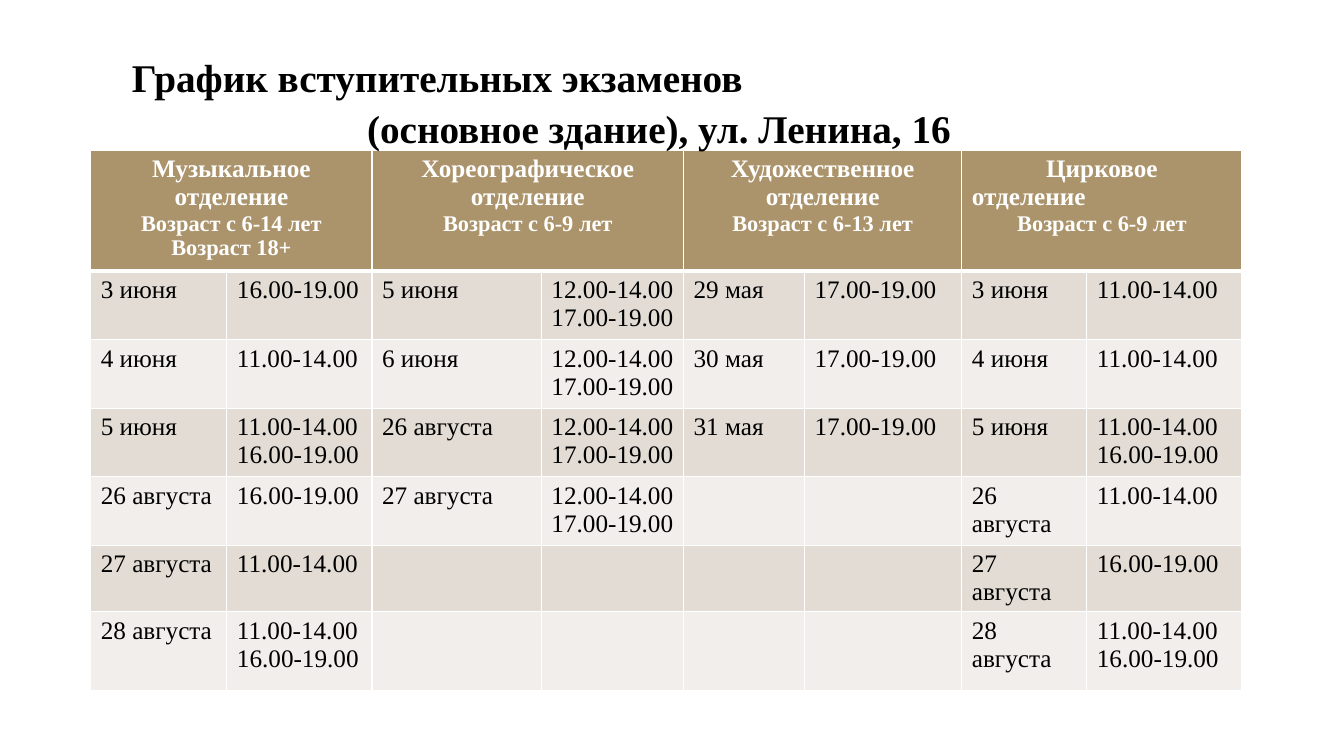
from lxml.etree import SubElement
from pptx import Presentation
from pptx.dml.color import RGBColor
from pptx.enum.text import MSO_ANCHOR, PP_ALIGN
from pptx.oxml.ns import qn
from pptx.util import Inches, Pt

FONT = "Times New Roman"
WHITE, BLACK, HEAD = "FFFFFF", "000000", "AB946B"
BANDS = ["E2DCD4", "F1EEEB"]
LEFT, CENTER = PP_ALIGN.LEFT, PP_ALIGN.CENTER

TITLE = [("График вступительных экзаменов", LEFT),
         ("(основное здание), ул. Ленина, 16", CENTER)]
MORNING, EVENING = "11.00-14.00", "16.00-19.00"
NOON, LATE = "12.00-14.00", "17.00-19.00"
DEPARTMENTS = [
    ([("Музыкальное отделение", 18, CENTER), ("Возраст с 6-14 лет", 16, CENTER),
      ("Возраст 18+", 16, CENTER)],
     [("3 июня", [EVENING]), ("4 июня", [MORNING]), ("5 июня", [MORNING, EVENING]),
      ("26 августа", [EVENING]), ("27 августа", [MORNING]),
      ("28 августа", [MORNING, EVENING])]),
    ([("Хореографическое отделение", 18, CENTER), ("Возраст с 6-9 лет", 16, CENTER)],
     [(day, [NOON, LATE]) for day in ("5 июня", "6 июня", "26 августа", "27 августа")]),
    ([("Художественное отделение", 18, CENTER), ("Возраст с 6-13 лет", 16, CENTER)],
     [(day, [LATE]) for day in ("29 мая", "30 мая", "31 мая")]),
    ([("Цирковое", 18, CENTER), ("отделение", 18, LEFT), ("Возраст с 6-9 лет", 16, CENTER)],
     [("3 июня", [MORNING]), ("4 июня", [MORNING]), ("5 июня", [MORNING, EVENING]),
      ("26 августа", [MORNING]), ("27 августа", [EVENING]),
      ("28 августа", [MORNING, EVENING])]),
]
COLS = [1.35, 1.44, 1.68, 1.41, 1.2, 1.56, 1.24, 1.54]
ROWS = [1.2] + [0.68] * 4 + [0.66, 0.78]


def rgb(value):
    return RGBColor.from_string(value)


def write(tf, lines, color, bold):
    for i, (text, size, align) in enumerate(lines):
        p = tf.paragraphs[0] if i == 0 else tf.add_paragraph()
        p.alignment = align
        r = p.add_run()
        r.text = text
        r.font.name, r.font.size, r.font.bold = FONT, Pt(size), bold
        r.font.color.rgb = rgb(color)


def style_cell(cell, row, fill):
    tcPr = cell._tc.get_or_add_tcPr()
    widths = {"a:lnL": 1, "a:lnR": 1, "a:lnT": 3 if row == 1 else 1,
              "a:lnB": 3 if row == 0 else 1}
    for tag, width in widths.items():
        ln = SubElement(tcPr, qn(tag), w=str(Pt(width)))
        SubElement(SubElement(ln, qn("a:solidFill")), qn("a:srgbClr"), val=WHITE)
    cell.fill.solid()
    cell.fill.fore_color.rgb = rgb(fill)
    cell.vertical_anchor = MSO_ANCHOR.TOP


def add_title(s):
    tf = s.shapes.add_textbox(Inches(1.21), Inches(0.44), Inches(10.65), Inches(1.04)).text_frame
    tf.word_wrap = True
    write(tf, [(text, 28, align) for text, align in TITLE], BLACK, True)
    for p in tf.paragraphs:
        p.line_spacing = 1.08


def add_schedule(s):
    table = s.shapes.add_table(len(ROWS), len(COLS), Inches(0.9), Inches(1.49),
                               Inches(sum(COLS)), Inches(sum(ROWS))).table
    for col, width in zip(table.columns, COLS):
        col.width = Inches(width)
    for i, (row, height) in enumerate(zip(table.rows, ROWS)):
        row.height = Inches(height)
        for cell in row.cells:
            style_cell(cell, i, BANDS[(i - 1) % 2] if i else HEAD)
    for d, (heading, exams) in enumerate(DEPARTMENTS):
        head = table.cell(0, 2 * d)
        head.merge(table.cell(0, 2 * d + 1))
        write(head.text_frame, heading, WHITE, True)
        for i, (day, times) in enumerate(exams, 1):
            for j, lines in enumerate(([day], times)):
                write(table.cell(i, 2 * d + j).text_frame,
                      [(text, 18, LEFT) for text in lines], BLACK, False)


def main():
    prs = Presentation()
    prs.slide_width, prs.slide_height = Inches(13.33), Inches(7.5)
    s = prs.slides.add_slide(prs.slide_layouts[6])
    add_schedule(s)
    add_title(s)
    prs.save("out.pptx")


if __name__ == "__main__":
    main()
